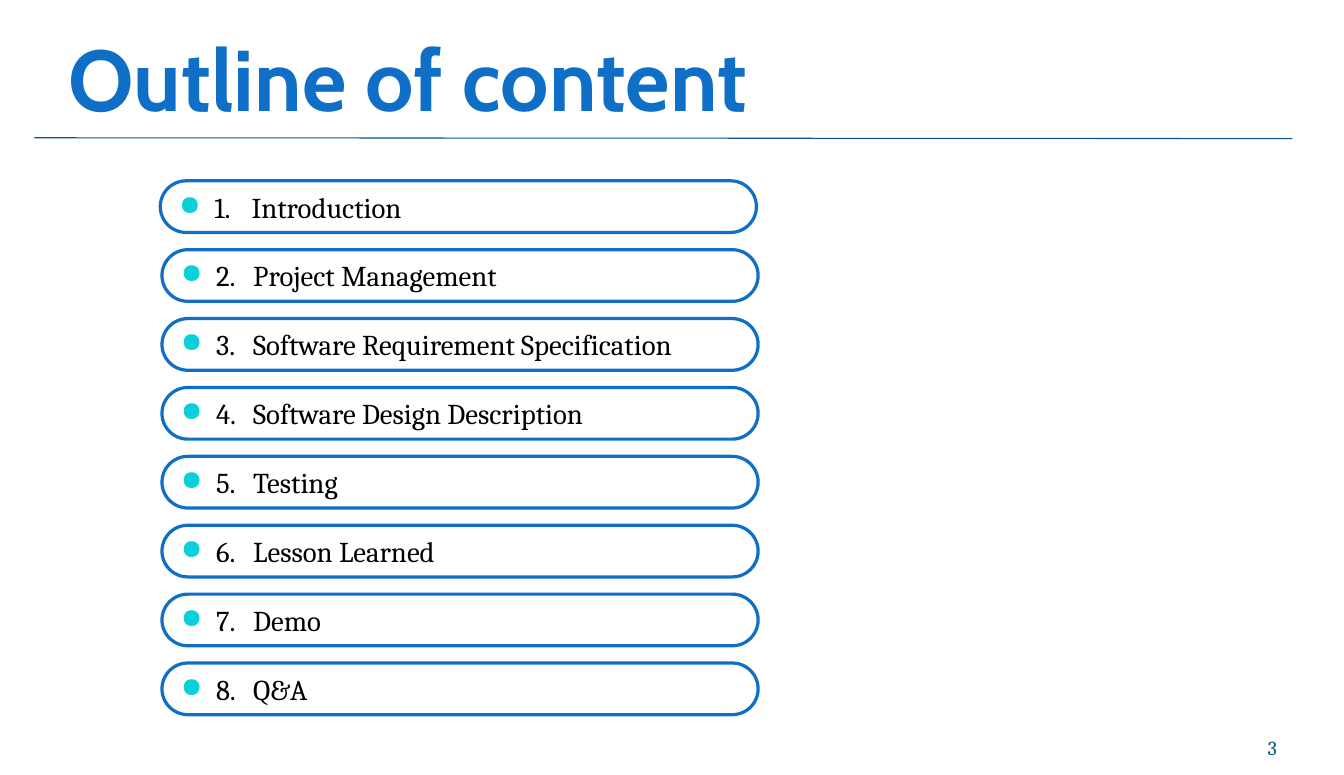
import pptx
import pptx.dml.color
import pptx.enum.shapes
import pptx.enum.text
import pptx.oxml
import pptx.oxml.ns
import pptx.util
import lxml.etree

COLUMNS, ROWS = 156, 90
TOPICS = [
    "Introduction",
    "Project Management",
    "Software Requirement Specification",
    "Software Design Description",
    "Testing",
    "Lesson Learned",
    "Demo",
    "Q&A",
]
ANCHOR = pptx.enum.text.MSO_ANCHOR
ALIGN = pptx.enum.text.PP_ALIGN


def rgb(color):
    return pptx.dml.color.RGBColor.from_string(color)


def set_all(target, values):
    for name, value in values.items():
        setattr(target, name, value)


class Deck:
    BLUE, RULE, TEAL, BULLET = "0F6FC6", "095295", "045D75", "0BD0D9"
    WHITE, BLACK = "FFFFFF", "000000"
    HEADING, BODY = "Cabin", "Cambria"

    def __init__(self, width, height):
        self.prs = pptx.Presentation()
        self.prs.slide_width = pptx.util.Inches(width)
        self.prs.slide_height = pptx.util.Inches(height)
        self.s = self.prs.slides.add_slide(self.prs.slide_layouts[6])

    def grid(self, *cells):
        """Turn alternating column and row counts into slide lengths."""
        steps = (self.prs.slide_width / COLUMNS, self.prs.slide_height / ROWS)
        return [round(cell * steps[i % 2]) for i, cell in enumerate(cells)]

    def add_text(self, p, text, color, **font):
        r = p.add_run()
        r.text = text
        r.font.color.rgb = rgb(color)
        set_all(r.font, font)

    def frame(self, sp, anchor, left, top, right, bottom):
        tf = sp.text_frame
        inch = pptx.util.Inches
        set_all(tf, {
            "word_wrap": True, "vertical_anchor": anchor,
            "margin_left": inch(left), "margin_top": inch(top),
            "margin_right": inch(right), "margin_bottom": inch(bottom),
        })
        return tf.paragraphs[0]

    def label(self, box, text, color, align=ALIGN.LEFT, top=0, **font):
        sp = self.s.shapes.add_textbox(*self.grid(*box))
        p = self.frame(sp, ANCHOR.BOTTOM, 0, top, 0, 0)
        p.alignment = align
        self.add_text(p, text, color, **font)

    def rule(self, *ends):
        line = self.s.shapes.add_connector(
            pptx.enum.shapes.MSO_CONNECTOR.STRAIGHT, *self.grid(*ends))
        line.line.color.rgb = rgb(self.RULE)
        line.line.width = pptx.util.Pt(0.75)
        lxml.etree.SubElement(line._element.spPr, pptx.oxml.ns.qn("a:effectLst"))

    def bullet(self, p):
        """Add a hanging bullet and the tab stops that follow the number.

        The two stops give the same gap whether a viewer measures tabs
        from the text margin or from the indent.
        """
        inch = pptx.util.Inches
        pPr = p._p.get_or_add_pPr()
        pPr.set("marL", str(inch(0.34)))
        pPr.set("indent", str(inch(-0.34)))
        xml = (
            f'<a:pPr {pptx.oxml.ns.nsdecls("a")}>'
            f'<a:buClr><a:srgbClr val="{self.BULLET}"/></a:buClr>'
            '<a:buSzPct val="95000"/><a:buChar char="●"/><a:tabLst>'
            f'<a:tab pos="{inch(0.36)}" algn="l"/>'
            f'<a:tab pos="{inch(0.7)}" algn="l"/>'
            '</a:tabLst></a:pPr>')
        for child in list(pptx.oxml.parse_xml(xml)):
            pPr.append(child)

    def pill(self, box, text):
        sp = self.s.shapes.add_shape(
            pptx.enum.shapes.MSO_SHAPE.ROUNDED_RECTANGLE, *self.grid(*box))
        sp.adjustments[0] = 0.5
        sp.shadow.inherit = False
        sp.fill.solid()
        sp.fill.fore_color.rgb = rgb(self.WHITE)
        sp.line.color.rgb = rgb(self.BLUE)
        sp.line.width = pptx.util.Pt(2.25)
        p = self.frame(sp, ANCHOR.MIDDLE, 0.11, 0.06, 0.11, 0.06)
        p.alignment = ALIGN.LEFT
        self.bullet(p)
        self.add_text(p, text, self.BLACK, name=self.BODY, size=pptx.util.Pt(20))


def main():
    deck = Deck(13, 7.5)
    deck.label((8, 0, 142.4, 15), "Outline of content", deck.BLUE, top=0.06,
               name=deck.HEADING, size=pptx.util.Pt(60), bold=True)
    deck.label((135.2, 83.4, 13, 4.8), "3", deck.TEAL, ALIGN.RIGHT,
               name=deck.BODY, size=pptx.util.Pt(14))
    deck.rule(4, 16, 150, 16.1)
    for i, topic in enumerate(TOPICS):
        left = 18.8 if i else 18.6
        deck.pill((left, 21 + 8 * i, 69.2, 6), f"{i + 1}.\t{topic}")
    deck.prs.save("out.pptx")


if __name__ == "__main__":
    main()
